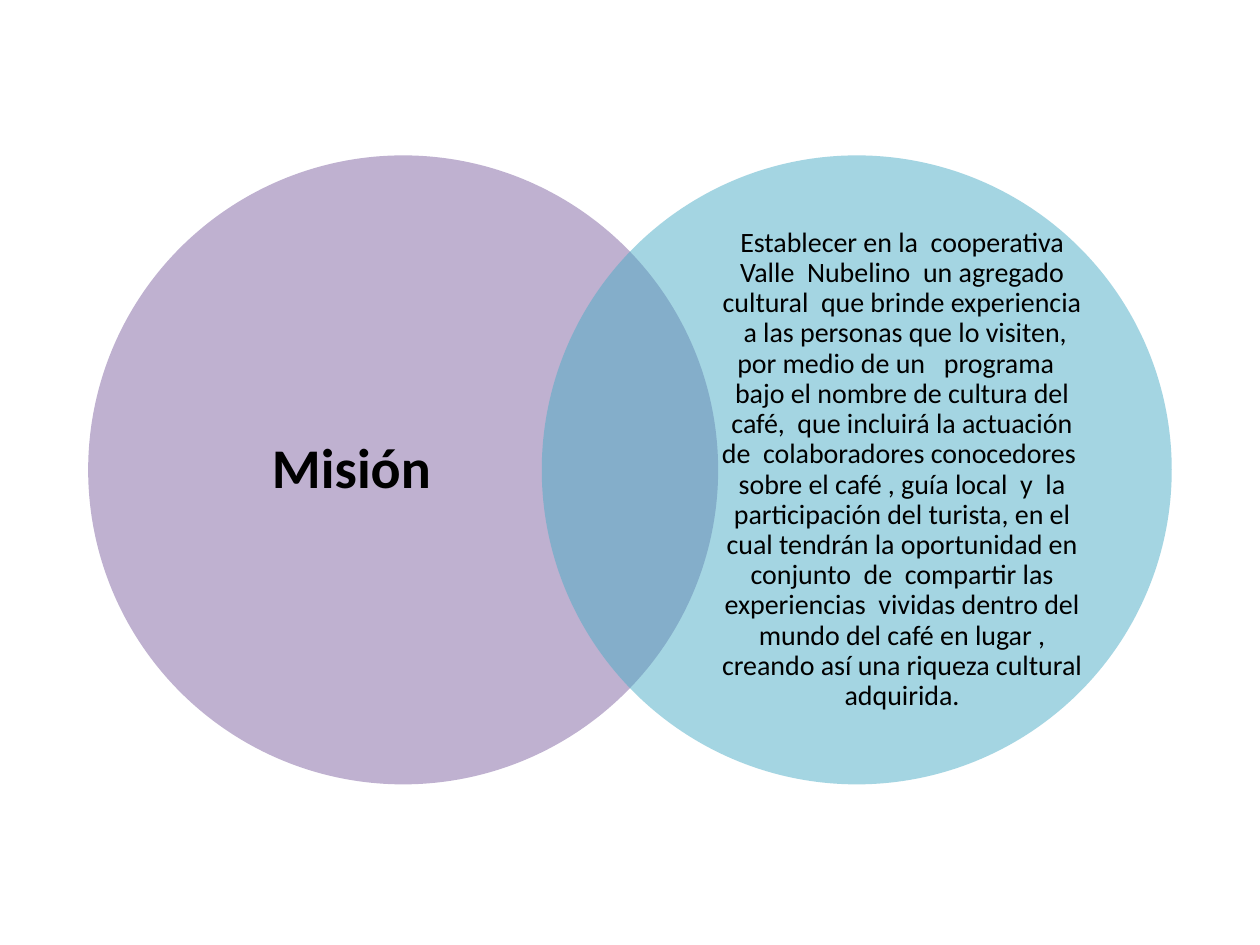
"""Build a slide with two overlapping circles that state a mission."""
from lxml import etree
from pptx import Presentation
from pptx.dml.color import RGBColor
from pptx.enum import shapes, text
from pptx.oxml import ns
from pptx.util import Pt

PURPLE = RGBColor(0x80, 0x64, 0xA2)
TEAL = RGBColor(0x4B, 0xAC, 0xC6)
BLACK = RGBColor(0, 0, 0)

GOAL = (
    "Establecer en la  cooperativa Valle  Nubelino  un agregado cultural  "
    "que brinde experiencia  a las personas que lo visiten, por medio de un   "
    "programa   bajo el nombre de cultura del café,  que incluirá la actuación "
    "de  colaboradores conocedores  sobre el café , guía local  y  la "
    "participación del turista, en el cual tendrán la oportunidad en conjunto  "
    "de  compartir las experiencias  vividas dentro del mundo del café en "
    "lugar , creando así una riqueza cultural adquirida."
)
SETS = [
    {"fill": PURPLE, "words": "Misión ", "inset": 50.4,
     "font": {"size": Pt(32), "bold": True}},
    {"fill": TEAL, "words": GOAL, "inset": 102.2,
     "font": {"size": Pt(16), "bold": False}},
]
WIDE, HIGH = 720, 540
LEFT, TOP = 50.4, 88.8
DIAM, TALL = 360, 359.4
STEP = WIDE - 2 * LEFT - DIAM
BOX_W, BOX_H = 207.4, 275
ALPHA = "50000"
FRAME = {"word_wrap": True, "vertical_anchor": text.MSO_ANCHOR.MIDDLE,
         "margin_left": 0, "margin_right": 0,
         "margin_top": 0, "margin_bottom": 0}
PARA = {"alignment": text.PP_ALIGN.CENTER, "line_spacing": 0.9}


def assign(item, values):
    for name, value in values.items():
        setattr(item, name, value)


def add_disc(slide, left, color):
    disc = slide.shapes.add_shape(
        shapes.MSO_SHAPE.OVAL, Pt(left), Pt(TOP), Pt(DIAM), Pt(TALL))
    disc.shadow.inherit = False
    disc.line.fill.background()
    disc.fill.solid()
    disc.fill.fore_color.rgb = color
    tone = disc.fill._xPr.find(".//" + ns.qn("a:srgbClr"))
    etree.SubElement(tone, ns.qn("a:alpha"), val=ALPHA)


def add_words(slide, left, words, style):
    top = TOP + (TALL - BOX_H) / 2
    box = slide.shapes.add_textbox(Pt(left), Pt(top), Pt(BOX_W), Pt(BOX_H))
    assign(box.text_frame, FRAME)
    para = box.text_frame.paragraphs[0]
    assign(para, PARA)
    run = para.add_run()
    run.text = words
    assign(run.font, {"name": "Calibri", **style})
    run.font.color.rgb = BLACK


def main():
    deck = Presentation()
    assign(deck, {"slide_width": Pt(WIDE), "slide_height": Pt(HIGH)})
    slide = deck.slides.add_slide(deck.slide_layouts[6])
    for i, part in enumerate(SETS):
        left = LEFT + i * STEP
        add_disc(slide, left, part["fill"])
        add_words(slide, left + part["inset"], part["words"], part["font"])
    deck.save("out.pptx")


if __name__ == "__main__":
    main()
